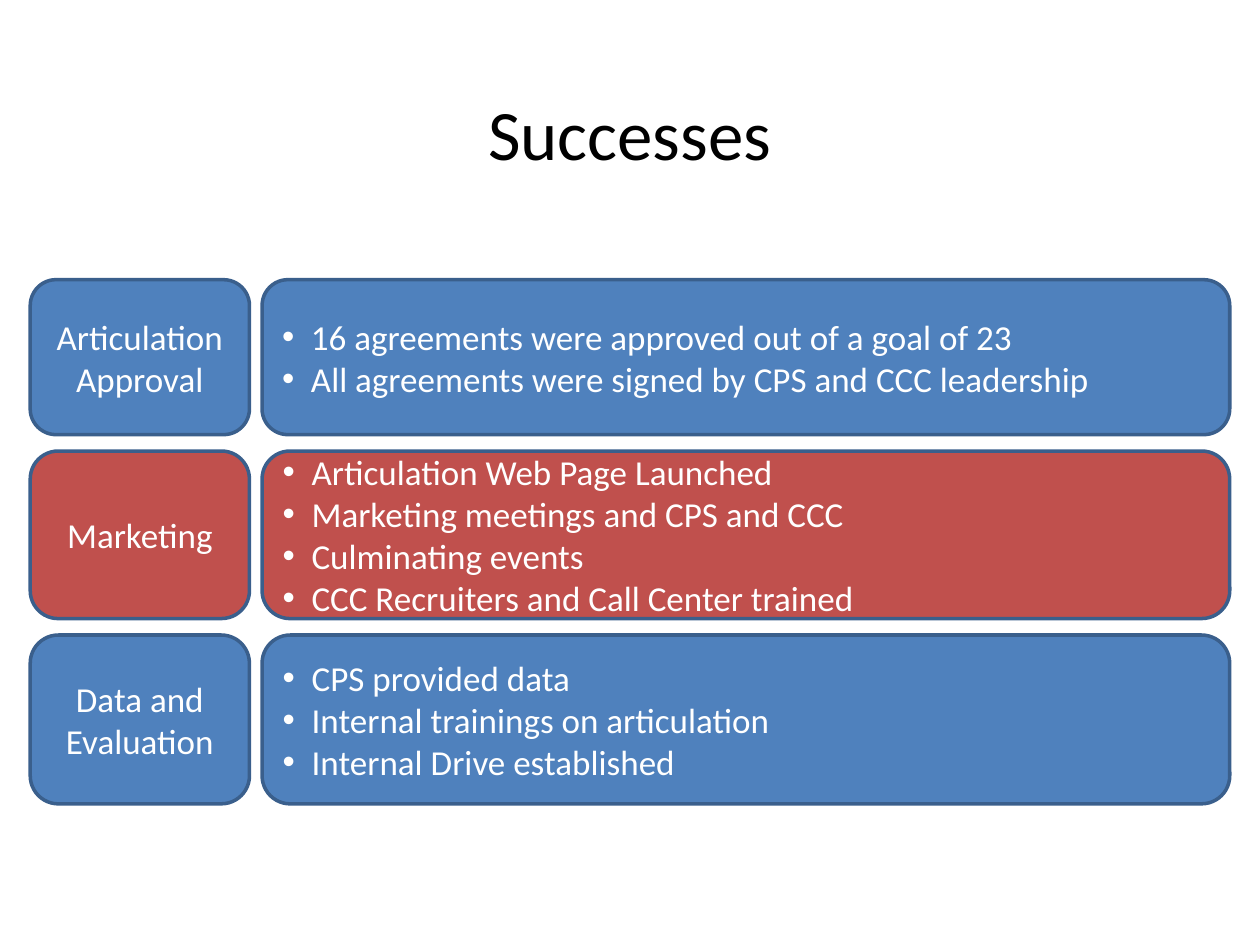
from lxml.etree import SubElement
from pptx import Presentation
from pptx.dml.color import RGBColor
from pptx.enum.shapes import MSO_SHAPE
from pptx.enum.text import MSO_ANCHOR, PP_ALIGN
from pptx.oxml.ns import qn
from pptx.util import Inches, Pt

deck = Presentation()
deck.slide_width, deck.slide_height = Inches(10), Inches(7.5)
slide = deck.slides.add_slide(deck.slide_layouts[5])


def style(para, size, color, align):
    para.alignment = align
    for run in para.runs:
        run.font.name = "Calibri"
        run.font.size = Pt(size)
        run.font.color.rgb = RGBColor.from_string(color)


def add_card(x, y, width, height, color, lines, bullets):
    card = slide.shapes.add_shape(
        MSO_SHAPE.ROUNDED_RECTANGLE, Inches(x), Inches(y), Inches(width), Inches(height))
    card.shadow.inherit = False
    card.fill.solid()
    card.fill.fore_color.rgb = RGBColor.from_string(color)
    card.line.color.rgb = RGBColor.from_string("3A5F8C")
    card.line.width = Pt(2)
    frame = card.text_frame
    frame.word_wrap = True
    frame.vertical_anchor = MSO_ANCHOR.MIDDLE
    frame.text = "\n".join(lines)
    for para in frame.paragraphs:
        style(para, 20, "FFFFFF", PP_ALIGN.LEFT if bullets else PP_ALIGN.CENTER)
        if bullets:
            props = para._p.get_or_add_pPr()
            props.set("marL", str(Inches(0.23)))
            props.set("indent", str(-Inches(0.23)))
            SubElement(props, qn("a:buFont")).set("typeface", "Arial")
            SubElement(props, qn("a:buChar")).set("char", "•")


# Title
title = slide.shapes.title
title.left, title.top = Inches(0.5), Inches(0.66)
title.width, title.height = Inches(9), Inches(0.78)
title.text_frame.text = "Successes"
title.text_frame.vertical_anchor = MSO_ANCHOR.MIDDLE
style(title.text_frame.paragraphs[0], 40.5, "000000", PP_ALIGN.CENTER)

# Rows: height, colour, topic, points
rows = [
    (1.23, "4F81BD", "Articulation Approval", [
        "16 agreements were approved out of a goal of 23",
        "All agreements were signed by CPS and CCC leadership"]),
    (1.33, "C0504D", "Marketing", [
        "Articulation Web Page Launched",
        "Marketing meetings and CPS and CCC",
        "Culminating events",
        "CCC Recruiters and Call Center trained"]),
    (1.34, "4F81BD", "Data and Evaluation", [
        "CPS provided data",
        "Internal trainings on articulation",
        "Internal Drive established"]),
]

# Two columns of cards, stacked with an equal gap
left, narrow, wide = 0.24, 1.74, 7.68
gap_x, gap_y = 0.1, 0.13
top = 2.22
for height, color, topic, points in rows:
    add_card(left, top, narrow, height, color, [topic], False)
    add_card(left + narrow + gap_x, top, wide, height, color, points, True)
    top += height + gap_y

deck.save("out.pptx")
